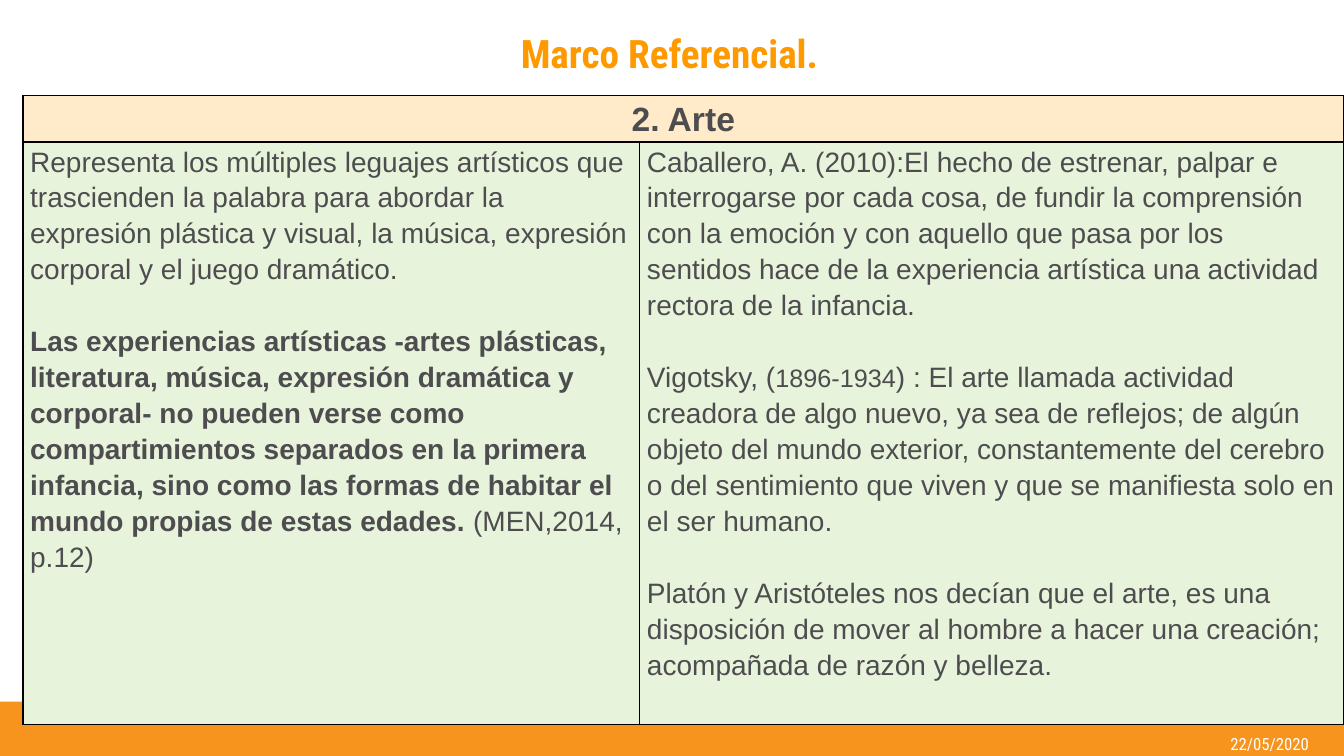
from dataclasses import dataclass

from lxml import etree
from pptx import Presentation
from pptx.dml.color import RGBColor
from pptx.enum import shapes, text
from pptx.oxml import ns
from pptx.util import Cm, Pt


@dataclass(frozen=True)
class Theme:
    orange: str = "F7941D"
    title: str = "FF9900"
    ink: str = "4D4D4F"
    white: str = "FFFFFF"
    border: str = "000000"
    header_fill: str = "FFEAC9"
    body_fill: str = "E8F3DB"
    display_font: str = "Roboto Condensed"
    body_font: str = "Arial"
    title_size: int = 28
    header_size: int = 24
    body_size: int = 20
    years_size: int = 18
    date_size: int = 12


THEME = Theme()

CONCEPT = [
    [("Representa los múltiples leguajes artísticos que trascienden la palabra para abordar "
      "la expresión plástica y visual, la música, expresión corporal y el juego dramático.", {})],
    [("Las experiencias artísticas -artes plásticas, literatura, música, expresión dramática "
      "y corporal- no pueden verse como compartimientos separados en la primera infancia, "
      "sino como las formas de habitar el mundo propias de estas edades. ", {"bold": True}),
     ("(MEN,2014, p.12)", {})],
]

AUTHORS = [
    [("Caballero, A. (2010):El hecho de estrenar, palpar e interrogarse por cada cosa, de "
      "fundir la comprensión con la emoción y con aquello que pasa por los sentidos hace de "
      "la experiencia artística una actividad rectora de la infancia.", {})],
    [("Vigotsky, (", {}),
     ("1896-1934", {"size": THEME.years_size}),
     (") : El arte llamada actividad creadora de algo nuevo, ya sea de reflejos; de algún "
      "objeto del mundo exterior, constantemente del cerebro o del sentimiento que viven y "
      "que se manifiesta solo en el ser humano.", {})],
    [("Platón y Aristóteles nos decían que el arte, es una disposición de mover al hombre a "
      "hacer una creación; acompañada de razón y belleza.", {})],
]


def add_run(p, content, size=THEME.body_size, font=THEME.body_font, color=THEME.ink, bold=False):
    r = p.add_run()
    r.text = content
    r.font.size = Pt(size)
    r.font.name = font
    r.font.bold = bold
    r.font.color.rgb = RGBColor.from_string(color)


def set_title(s, content):
    title = s.shapes.title
    title.left, title.top, title.width, title.height = Cm(2.26), Cm(0.33), Cm(29.21), Cm(1.98)
    tf = title.text_frame
    tf.vertical_anchor = text.MSO_ANCHOR.MIDDLE
    p = tf.paragraphs[0]
    p.alignment = text.PP_ALIGN.CENTER
    add_run(p, content, size=THEME.title_size, font=THEME.display_font,
            color=THEME.title, bold=True)


def add_band(s, width):
    band = s.shapes.add_shape(shapes.MSO_SHAPE.RECTANGLE, 0, Cm(17.68), width, Cm(1.37))
    band.shadow.inherit = False
    band.fill.solid()
    band.fill.fore_color.rgb = RGBColor.from_string(THEME.orange)
    band.line.fill.background()


def add_date(s, content):
    tf = s.shapes.add_textbox(Cm(30.2), Cm(18.49), Cm(3.58), Cm(0.53)).text_frame
    tf.word_wrap = True
    tf.vertical_anchor = text.MSO_ANCHOR.MIDDLE
    p = tf.paragraphs[0]
    p.alignment = text.PP_ALIGN.CENTER
    add_run(p, content, size=THEME.date_size, font=THEME.display_font, color=THEME.white)


def set_borders(cell):
    props = cell._tc.get_or_add_tcPr()
    for i, side in enumerate(("lnL", "lnR", "lnT", "lnB")):
        line = etree.Element(ns.qn(f"a:{side}"), w=str(Pt(1)))
        fill = etree.SubElement(line, ns.qn("a:solidFill"))
        etree.SubElement(fill, ns.qn("a:srgbClr"), val=THEME.border)
        props.insert(i, line)


def style_cell(cell, fill):
    cell.fill.solid()
    cell.fill.fore_color.rgb = RGBColor.from_string(fill)
    cell.margin_left = cell.margin_right = Cm(0.18)
    cell.margin_top = cell.margin_bottom = 0
    set_borders(cell)


def write_cell(cell, paragraphs, align=text.PP_ALIGN.LEFT):
    tf = cell.text_frame
    for i, runs in enumerate(paragraphs):
        p = tf.add_paragraph() if i else tf.paragraphs[0]
        p.alignment = align
        p.line_spacing = 1.15
        if i:
            p.space_before = Cm(0.91)
        for content, style in runs:
            add_run(p, content, **style)


def add_reference_table(s, heading, columns):
    widths = Cm(15.54), Cm(17.73)
    heights = Cm(1.07), Cm(14.68)
    table = s.shapes.add_table(len(heights), len(widths), Cm(0.58), Cm(2.41),
                               sum(widths), sum(heights)).table
    table.first_row = table.horz_banding = False
    for column, width in zip(table.columns, widths):
        column.width = width
    for row, height, fill in zip(table.rows, heights, (THEME.header_fill, THEME.body_fill)):
        row.height = height
        for cell in row.cells:
            style_cell(cell, fill)
    table.cell(0, 0).merge(table.cell(0, 1))
    write_cell(table.cell(0, 0), [[(heading, {"size": THEME.header_size, "bold": True})]],
               align=text.PP_ALIGN.CENTER)
    for i, paragraphs in enumerate(columns):
        write_cell(table.cell(1, i), paragraphs)


def main():
    prs = Presentation()
    prs.slide_width, prs.slide_height = Cm(33.86), Cm(19.05)
    s = prs.slides.add_slide(prs.slide_layouts.get_by_name("Title Only"))
    add_band(s, prs.slide_width)
    add_date(s, "22/05/2020")
    set_title(s, "Marco Referencial.")
    add_reference_table(s, "2. Arte", [CONCEPT, AUTHORS])
    prs.save("out.pptx")


if __name__ == "__main__":
    main()
